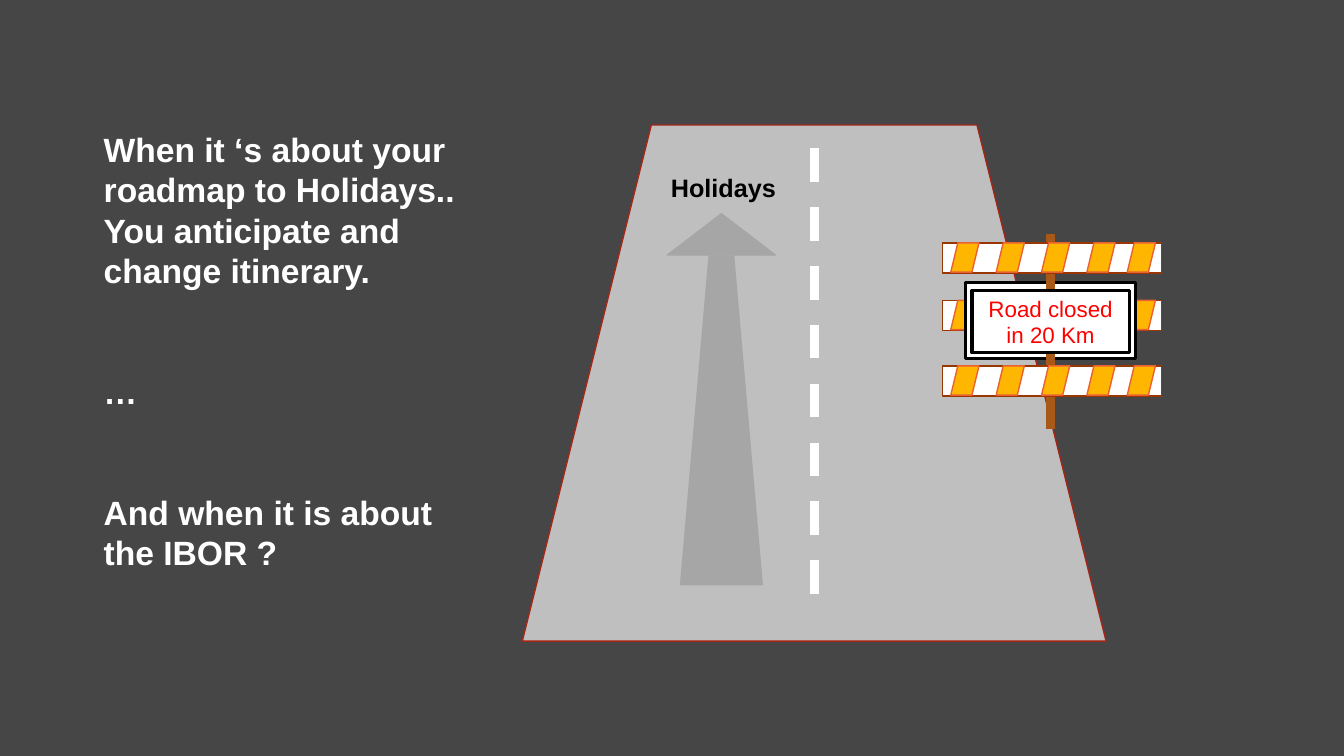
from dataclasses import dataclass

import pptx
import pptx.dml.color
import pptx.enum.dml
import pptx.enum.shapes
import pptx.enum.text
import pptx.oxml
import pptx.oxml.ns
import pptx.util

PX = 9144  # 100 px to the inch
Shape = pptx.enum.shapes.MSO_SHAPE
Align = pptx.enum.text.PP_ALIGN
Anchor = pptx.enum.text.MSO_ANCHOR


@dataclass(frozen=True)
class Theme:
    font: str = "Arial"
    background: str = "464646"
    white: str = "FFFFFF"
    black: str = "000000"
    road: str = "BFBFBF"
    road_edge: str = "A62416"
    arrow: str = "A6A6A6"
    plank_edge: str = "9A3701"
    stripe: str = "FFB600"
    stripe_edge: str = "EB5F33"
    post: str = "A95917"
    warning: str = "FF0000"
    message_size: float = 24
    message_leading: float = 28.8
    label_size: float = 18
    sign_size: float = 16
    thin: float = 1
    frame: float = 2.25
    thick: float = 6


@dataclass(frozen=True)
class Area:
    left: int
    top: int
    width: int
    height: int

    def emu(self) -> tuple[int, int, int, int]:
        return self.left * PX, self.top * PX, self.width * PX, self.height * PX


@dataclass(frozen=True)
class Style:
    fill: str
    line: str
    weight: float


@dataclass(frozen=True)
class Plank:
    top: int
    stripes: tuple[int, ...]


THEME = Theme()
ROAD = Style(THEME.road, THEME.road_edge, THEME.thin)
ARROW = Style(THEME.arrow, THEME.arrow, THEME.thin)
BOARD = Style(THEME.white, THEME.plank_edge, THEME.thin)
STRIPE = Style(THEME.stripe, THEME.stripe_edge, THEME.thin)
SIGN = Style(THEME.white, THEME.black, THEME.frame)

BARRIER_LEFT = 935
STRIPES = (8, 53, 98, 143, 183)
TOP_PLANK = Plank(241, STRIPES)
MIDDLE_PLANK = Plank(298, (STRIPES[0], STRIPES[-1]))
BOTTOM_PLANK = Plank(363, STRIPES)

MESSAGE = (
    "When it ‘s about your roadmap to Holidays.. You anticipate and change itinerary.",
    "…",
    "And when it is about the IBOR ?",
)


def rgb(value: str) -> pptx.dml.color.RGBColor:
    return pptx.dml.color.RGBColor.from_string(value)


def add_figure(page, kind, area: Area, style: Style, adjustment: float | None = None):
    figure = page.shapes.add_shape(kind, *area.emu())
    figure.shadow.inherit = False
    figure.fill.solid()
    figure.fill.fore_color.rgb = rgb(style.fill)
    figure.line.color.rgb = rgb(style.line)
    figure.line.width = pptx.util.Pt(style.weight)
    if adjustment is not None:
        figure.adjustments[0] = adjustment
    return figure


def add_upright(page, x: int, top: int, bottom: int, color: str, dashed: bool = False) -> None:
    upright = page.shapes.add_connector(
        pptx.enum.shapes.MSO_CONNECTOR.STRAIGHT, x * PX, top * PX, x * PX, bottom * PX
    )
    upright.line.color.rgb = rgb(color)
    upright.line.width = pptx.util.Pt(THEME.thick)
    if dashed:
        upright.line.dash_style = pptx.enum.dml.MSO_LINE.DASH
    properties = upright._element.spPr
    properties.append(pptx.oxml.parse_xml(f"<a:effectLst {pptx.oxml.ns.nsdecls('a')}/>"))


def add_plank(page, plank: Plank) -> None:
    add_figure(page, Shape.RECTANGLE, Area(BARRIER_LEFT, plank.top, 217, 30), BOARD)
    for offset in plank.stripes:
        area = Area(BARRIER_LEFT + offset, plank.top, 28, 29)
        add_figure(page, Shape.PARALLELOGRAM, area, STRIPE)


def add_span(para, text: str, size: float, color: str, bold: bool = False) -> None:
    span = para.add_run()
    span.text = text
    span.font.name = THEME.font
    span.font.size = pptx.util.Pt(size)
    span.font.bold = bold
    span.font.color.rgb = rgb(color)


def add_text_box(page, area: Area):
    box = page.shapes.add_textbox(*area.emu())
    box.text_frame.word_wrap = True
    return box.text_frame


def draw_road(page) -> None:
    add_figure(page, Shape.TRAPEZOID, Area(518, 124, 579, 512), ROAD)
    add_upright(page, 808, 147, 613, THEME.white, dashed=True)


def draw_barrier(page) -> None:
    add_plank(page, MIDDLE_PLANK)
    add_figure(page, Shape.RECTANGLE, Area(958, 280, 168, 76), SIGN)
    add_upright(page, 1042, 232, 426, THEME.post)
    sign = add_figure(page, Shape.RECTANGLE, Area(964, 288, 156, 62), SIGN)
    sign.text_frame.word_wrap = True
    sign.text_frame.vertical_anchor = Anchor.MIDDLE
    para = sign.text_frame.paragraphs[0]
    para.alignment = Align.CENTER
    add_span(para, "Road closed in 20 Km", THEME.sign_size, THEME.warning)
    add_plank(page, TOP_PLANK)
    add_plank(page, BOTTOM_PLANK)


def draw_direction(page) -> None:
    para = add_text_box(page, Area(643, 166, 149, 40)).paragraphs[0]
    para.alignment = Align.CENTER
    add_span(para, "Holidays", THEME.label_size, THEME.black, bold=True)
    add_figure(page, Shape.TRAPEZOID, Area(675, 254, 81, 326), ARROW, 0.35)
    add_figure(page, Shape.ISOSCELES_TRIANGLE, Area(662, 212, 107, 41), ARROW)


def draw_message(page) -> None:
    frame = add_text_box(page, Area(93, 123, 392, 454))
    for index, text in enumerate(MESSAGE):
        para = frame.add_paragraph() if index else frame.paragraphs[0]
        para.line_spacing = pptx.util.Pt(THEME.message_leading)
        if index:
            para.space_before = pptx.util.Pt(2 * THEME.message_leading)
        add_span(para, text, THEME.message_size, THEME.white, bold=True)


def main() -> None:
    deck = pptx.Presentation()
    deck.slide_width = 1333 * PX
    deck.slide_height = 750 * PX
    page = deck.slides.add_slide(deck.slide_layouts[6])
    page.background.fill.solid()
    page.background.fill.fore_color.rgb = rgb(THEME.background)

    # Road scene, from back to front
    draw_road(page)
    draw_barrier(page)
    draw_direction(page)

    # Statement on the left
    draw_message(page)
    deck.save("out.pptx")


if __name__ == "__main__":
    main()
